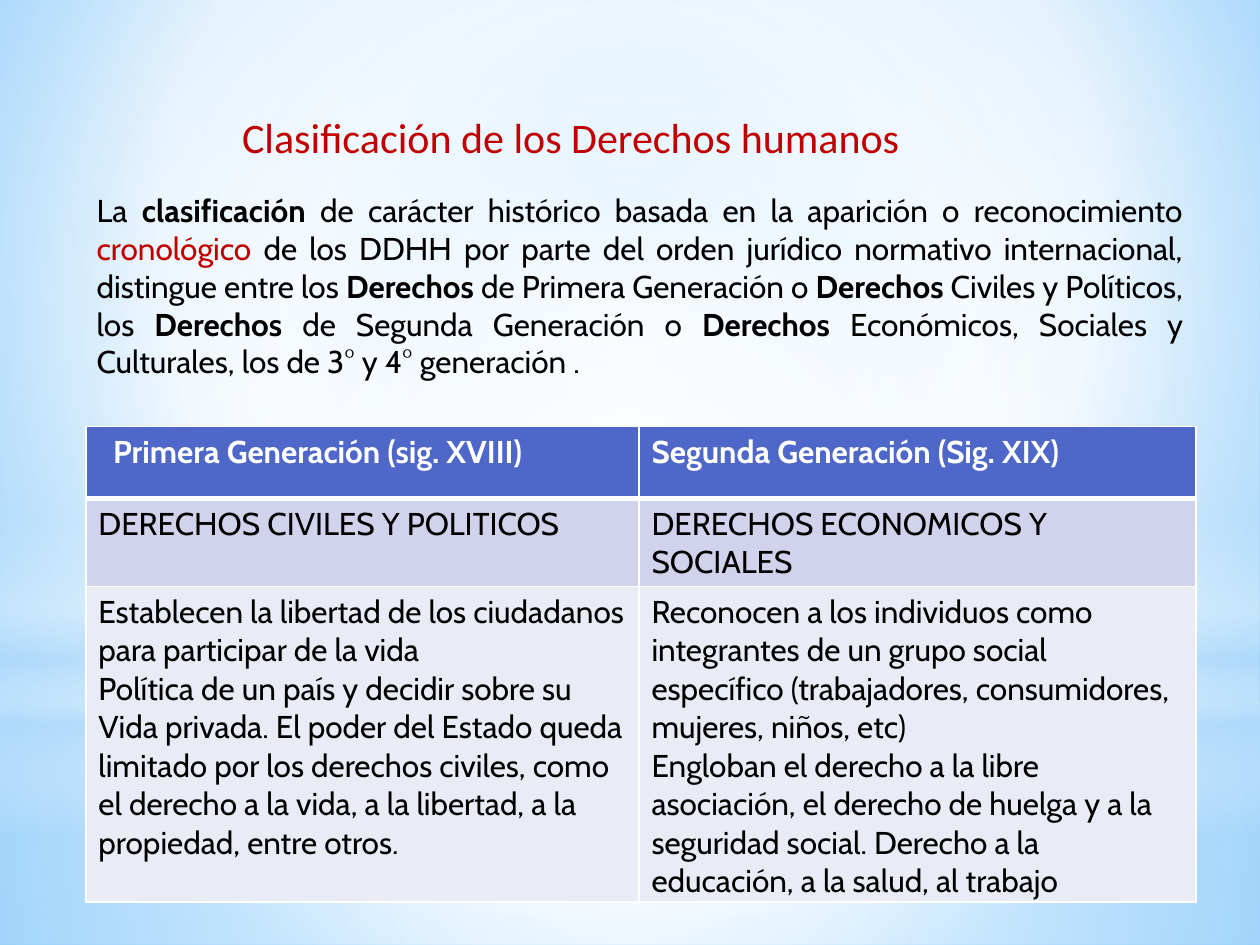
"""Builds a slide that classifies human rights by generation."""
import lxml.etree
import pptx
import pptx.dml.color
import pptx.enum.shapes
import pptx.enum.text
import pptx.oxml
import pptx.oxml.ns
import pptx.util

Cm = pptx.util.Cm
Pt = pptx.util.Pt
BLACK, WHITE, RED, PALE_BLUE = "000000", "FFFFFF", "C00000", "B4DCFA"
HEADER, BAND, LIGHT_BAND = "4E67C8", "D0D3EB", "E9EBF5"
CENTRE = (50, 50, 50, 50)

TITLE = "Clasificación de los Derechos humanos"
INTRODUCTION = [
    ("La ", False, BLACK),
    ("clasificación", True, BLACK),
    (" de carácter histórico basada en la aparición o reconocimiento ", False, BLACK),
    ("cronológico", False, RED),
    (" de los DDHH por parte del orden jurídico normativo internacional, "
     "distingue entre los ", False, BLACK),
    ("Derechos", True, BLACK),
    (" de Primera Generación o ", False, BLACK),
    ("Derechos", True, BLACK),
    (" Civiles y Políticos, los ", False, BLACK),
    ("Derechos", True, BLACK),
    (" de Segunda Generación o ", False, BLACK),
    ("Derechos", True, BLACK),
    (" Económicos, Sociales y Culturales, los de 3° y 4° generación .", False, BLACK),
]
GENERATIONS = [
    ["Primera Generación (sig. XVIII)", "Segunda Generación (Sig. XIX)"],
    ["DERECHOS CIVILES Y POLITICOS", "DERECHOS ECONOMICOS Y SOCIALES"],
    ["Establecen la libertad de los ciudadanos para participar de la vida\n"
     "Política de un país y decidir sobre su\n"
     "Vida privada. El poder del Estado queda limitado por los derechos civiles, "
     "como el derecho a la vida, a la libertad, a la propiedad, entre otros.",
     "Reconocen a los individuos como integrantes de un grupo social específico "
     "(trabajadores, consumidores, mujeres, niños, etc)\n"
     "Engloban el derecho a la libre asociación, el derecho de huelga y a la "
     "seguridad social. Derecho a la educación, a la salud, al trabajo"],
]


def color(value):
    return pptx.dml.color.RGBColor.from_string(value)


def set_gradient(fill, properties, stops, focus=None):
    fill.solid()
    stop_xml = "".join(
        f'<a:gs pos="{position * 1000}"><a:srgbClr val="{value}">'
        f'<a:alpha val="{opacity * 1000}"/></a:srgbClr></a:gs>'
        for position, value, opacity in stops)
    if focus:
        sides = " ".join(f'{side}="{share * 1000}"' for side, share in zip("ltrb", focus))
        direction = f'<a:path path="circle"><a:fillToRect {sides}/></a:path>'
    else:
        direction = '<a:lin ang="5400000" scaled="0"/>'
    gradient = pptx.oxml.parse_xml(
        f'<a:gradFill {pptx.oxml.ns.nsdecls("a")} rotWithShape="1">'
        f'<a:gsLst>{stop_xml}</a:gsLst>{direction}</a:gradFill>')
    properties.replace(properties.find(pptx.oxml.ns.qn("a:solidFill")), gradient)


def set_borders(cell, **widths):
    properties = cell._tc.get_or_add_tcPr()
    for index, side in enumerate("LRTB"):
        border = pptx.oxml.parse_xml(
            f'<a:ln{side} {pptx.oxml.ns.nsdecls("a")} w="{Pt(widths.get(side, 1))}">'
            f'<a:solidFill><a:srgbClr val="{WHITE}"/></a:solidFill></a:ln{side}>')
        properties.insert(index, border)


class SlideBuilder:
    def __init__(self, presentation, font="Cabin", size=18, title_font="Calibri", title_size=24):
        self.slide = presentation.slides.add_slide(presentation.slide_layouts[5])
        self.font, self.size = font, size
        self.title_font, self.title_size = title_font, title_size

    def background(self, stops, focus):
        fill = self.slide.background.fill
        fill.solid()
        set_gradient(fill, self.slide.element.xpath(".//p:bgPr")[0], stops, focus)

    def glow(self, kind, top, height, stops, focus=None):
        shape = self.slide.shapes.add_shape(kind, 0, Cm(top), Cm(25.4), Cm(height))
        shape.shadow.inherit = False
        set_gradient(shape.fill, shape.element.spPr, stops, focus)
        shape.line.fill.background()

    def title(self, text, left, top, width, height):
        shape = self.slide.shapes.title
        self.slide.shapes.element.append(shape.element)
        shape.left, shape.top, shape.width, shape.height = map(Cm, (left, top, width, height))
        frame = shape.text_frame
        frame.text = text
        frame.margin_left = 0
        frame.vertical_anchor = pptx.enum.text.MSO_ANCHOR.TOP
        frame.auto_size = pptx.enum.text.MSO_AUTO_SIZE.SHAPE_TO_FIT_TEXT
        paragraph = frame.paragraphs[0]
        paragraph.alignment = pptx.enum.text.PP_ALIGN.LEFT
        paragraph.font.name, paragraph.font.size = self.title_font, Pt(self.title_size)
        paragraph.font.color.rgb = color(RED)

    def rich_text(self, parts, left, top, width, height):
        shape = self.slide.shapes.add_textbox(*map(Cm, (left, top, width, height)))
        frame = shape.text_frame
        frame.word_wrap = True
        frame.auto_size = pptx.enum.text.MSO_AUTO_SIZE.SHAPE_TO_FIT_TEXT
        paragraph = frame.paragraphs[0]
        paragraph.alignment = pptx.enum.text.PP_ALIGN.JUSTIFY
        paragraph.font.name, paragraph.font.size = self.font, Pt(self.size)
        for text, bold, text_color in parts:
            run = paragraph.add_run()
            run.text = text
            run.font.bold = bold
            run.font.color.rgb = color(text_color)

    def table(self, rows, left, top, widths, row_height):
        table = self.slide.shapes.add_table(
            len(rows), len(widths), Cm(left), Cm(top),
            Cm(sum(widths)), Cm(row_height * len(rows))).table
        for column, width in zip(table.columns, widths):
            column.width = Cm(width)
        for row_index, (texts, fill) in enumerate(zip(rows, (HEADER, BAND, LIGHT_BAND))):
            is_header = row_index == 0
            for column_index, text in enumerate(texts):
                cell = table.cell(row_index, column_index)
                cell.text = text
                cell.fill.solid()
                cell.fill.fore_color.rgb = color(fill)
                set_borders(cell, T=3 if row_index == 1 else 1, B=3 if is_header else 1)
                for paragraph in cell.text_frame.paragraphs:
                    font = paragraph.font
                    font.name, font.size, font.bold = self.font, Pt(self.size), is_header
                    font.color.rgb = color(WHITE if is_header else BLACK)
        table.cell(0, 0).margin_left = Cm(0.55)


def main():
    presentation = pptx.Presentation()
    presentation.slide_width, presentation.slide_height = Cm(25.4), Cm(19.05)
    builder = SlideBuilder(presentation)
    rectangle = pptx.enum.shapes.MSO_SHAPE.RECTANGLE
    oval = pptx.enum.shapes.MSO_SHAPE.OVAL
    builder.background(
        [(0, "9ED5FF", 100), (60, WHITE, 100), (100, "5BB9FF", 100)], (20, 10, 20, 60))
    builder.glow(rectangle, 14.17, 4.88,
                 [(0, WHITE, 91), (37, WHITE, 76), (100, PALE_BLUE, 79)], CENTRE)
    builder.glow(rectangle, 0, 14.17,
                 [(0, WHITE, 89), (48, WHITE, 62), (100, PALE_BLUE, 79)], CENTRE)
    builder.glow(rectangle, 10.46, 6.35,
                 [(0, WHITE, 0), (29, WHITE, 30), (45, PALE_BLUE, 40),
                  (55, WHITE, 26), (65, PALE_BLUE, 60), (100, WHITE, 0)])
    builder.glow(oval, 4.45, 14.17, [(0, WHITE, 100), (56, WHITE, 0)], CENTRE)
    builder.rich_text(INTRODUCTION, 1.7, 3.73, 22.4, 4.88)
    builder.title(TITLE, 4.88, 2.13, 18.8, 1.27)
    builder.table(GENERATIONS, 1.73, 8.6, (11.15, 11.23), 1.45)
    presentation.save("out.pptx")


if __name__ == "__main__":
    main()
